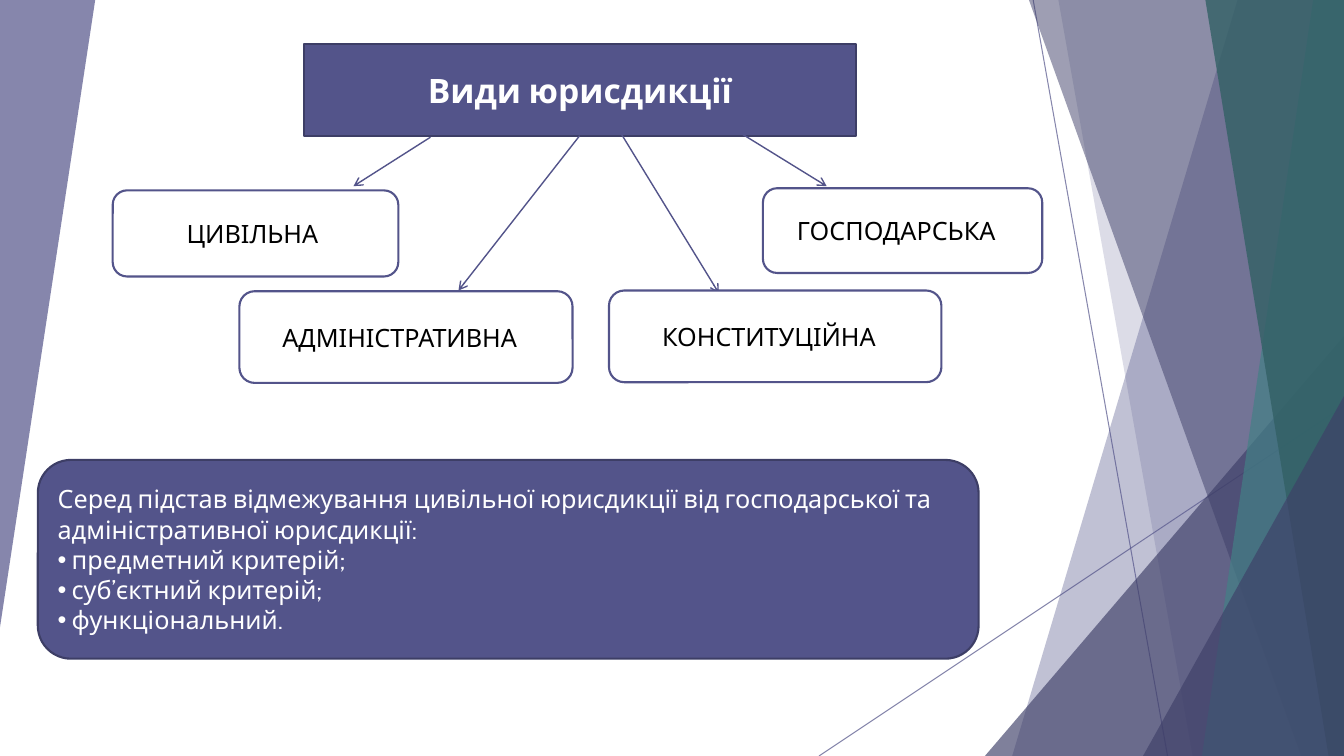
import dataclasses

import lxml.etree
import pptx
import pptx.dml.color
import pptx.enum.shapes
import pptx.enum.text
import pptx.oxml
import pptx.oxml.ns
import pptx.util

Pt = pptx.util.Pt
qn = pptx.oxml.ns.qn
SHAPE = pptx.enum.shapes.MSO_SHAPE
ALIGN = pptx.enum.text.PP_ALIGN
WIDTH, HEIGHT = 960, 540


@dataclasses.dataclass(frozen=True)
class Theme:
    font: str = "Cabin"
    title_size: int = 24
    text_size: int = 18
    main: str = "53548A"
    dark: str = "3E3F68"
    border: str = "3D3E66"
    teal: str = "438086"
    deep_teal: str = "326065"
    light: str = "FFFFFF"
    text: str = "000000"


THEME = Theme()


def rgb(value):
    return pptx.dml.color.RGBColor.from_string(value)


def apply(obj, values):
    for name, value in values.items():
        setattr(obj, name, value)


def place(sp, box):
    apply(sp, dict(zip(("left", "top", "width", "height"), map(Pt, box))))


def paint(sp, fill, line=None, opacity=100):
    sp.fill.solid()
    sp.fill.fore_color.rgb = rgb(fill)
    if opacity < 100:
        fade(sp, opacity)
    if line:
        sp.line.color.rgb = rgb(line)
        sp.line.width = Pt(1.5)
    else:
        sp.line.fill.background()


def fade(sp, opacity):
    color = next(sp.element.spPr.iter(qn("a:srgbClr")))
    lxml.etree.SubElement(color, qn("a:alpha"), val=str(opacity * 1000))


def write(sp, lines, size, color, bold=False, align=ALIGN.LEFT, right=7.2):
    tf = sp.text_frame
    apply(tf, {
        "text": "\n".join(lines),
        "word_wrap": True,
        "auto_size": pptx.enum.text.MSO_AUTO_SIZE.NONE,
        "vertical_anchor": pptx.enum.text.MSO_ANCHOR.MIDDLE,
        "margin_right": Pt(right),
    })
    for p in tf.paragraphs:
        apply(p, {"alignment": align, "space_before": Pt(0)})
        for r in p.runs:
            apply(r.font, {"name": THEME.font, "size": Pt(size), "bold": bold})
            r.font.color.rgb = rgb(color)


def set_bullet(p, char=None, indent=0):
    pPr = p._p.get_or_add_pPr()
    pPr.set("marL", str(Pt(indent)))
    pPr.set("indent", str(-Pt(indent)))
    if char:
        lxml.etree.SubElement(pPr, qn("a:buChar"), char=char)
    else:
        lxml.etree.SubElement(pPr, qn("a:buNone"))


def add_polygon(s, points, fill, opacity):
    start, *rest = [(Pt(x), Pt(y)) for x, y in points]
    builder = s.shapes.build_freeform(*start)
    builder.add_line_segments(rest, close=True)
    sp = builder.convert_to_shape()
    sp.shadow.inherit = False
    paint(sp, fill, opacity=opacity)


def add_band(s, top, bottom, fill, opacity):
    points = [(top, 0), (WIDTH, 0), (WIDTH, HEIGHT), (bottom, HEIGHT)]
    add_polygon(s, points, fill, opacity)


def add_corner(s, left, top):
    box = map(Pt, (left, top, WIDTH - left, HEIGHT - top))
    sp = s.shapes.add_shape(SHAPE.ISOSCELES_TRIANGLE, *box)
    sp.adjustments[0] = 1
    sp.shadow.inherit = False
    paint(sp, THEME.dark, opacity=66)


def add_line(s, ends, width, opacity=100, arrow=False):
    straight = pptx.enum.shapes.MSO_CONNECTOR.STRAIGHT
    line = s.shapes.add_connector(straight, *map(Pt, ends))
    line.line.color.rgb = rgb(THEME.main)
    line.line.width = Pt(width)
    if opacity < 100:
        fade(line, opacity)
    if arrow:
        ln = line.element.spPr.find(qn("a:ln"))
        lxml.etree.SubElement(ln, qn("a:tailEnd"), type="arrow")
    lxml.etree.SubElement(line.element.spPr, qn("a:effectLst"))


def add_backdrop(s):
    add_polygon(s, [(0, 0), (68, 0), (0, 448)], THEME.main, 70)
    add_line(s, (738, 0, 834, HEIGHT), 0.75, opacity=70)
    add_line(s, (WIDTH, 290, 585, HEIGHT), 0.75, opacity=70)
    add_band(s, 884, 723, THEME.main, 36)
    add_band(s, 756, 852, THEME.main, 20)
    add_corner(s, 703.5, 240)
    add_band(s, 735, 929.5, THEME.dark, 50)
    add_band(s, 938, 858.5, THEME.teal, 70)
    add_band(s, 861, 949, THEME.deep_teal, 80)
    add_corner(s, 816.5, 283)


def bring_forward(sp):
    sp.element.getparent().append(sp.element)


def fill_title(s, text):
    sp = s.shapes.title
    bring_forward(sp)
    place(sp, (217, 31.5, 394.5, 65.5))
    paint(sp, THEME.main, THEME.border)
    write(sp, [text], THEME.title_size, THEME.light, True, ALIGN.CENTER)


def fill_panel(s, intro, items):
    sp = s.placeholders[1]
    bring_forward(sp)
    place(sp, (27, 328.5, 672, 142))
    geom = pptx.oxml.parse_xml(
        '<a:prstGeom %s prst="roundRect"><a:avLst/></a:prstGeom>' % pptx.oxml.ns.nsdecls("a"))
    sp.element.spPr.find(qn("a:xfrm")).addnext(geom)
    paint(sp, THEME.main, THEME.border)
    write(sp, [intro, *items], THEME.text_size, THEME.light)
    first, *rest = sp.text_frame.paragraphs
    set_bullet(first)
    for p in rest:
        set_bullet(p, "•", 10)


def add_kind(s, text, box, right):
    sp = s.shapes.add_shape(SHAPE.ROUNDED_RECTANGLE, *map(Pt, box))
    sp.shadow.inherit = False
    paint(sp, THEME.light, THEME.main)
    write(sp, [text], THEME.text_size, THEME.text, align=ALIGN.CENTER, right=right)


def main():
    prs = pptx.Presentation()
    apply(prs, {"slide_width": Pt(WIDTH), "slide_height": Pt(HEIGHT)})
    s = prs.slides.add_slide(prs.slide_layouts[1])
    add_backdrop(s)
    fill_title(s, "Види юрисдикції")
    fill_panel(
        s,
        "Серед підстав відмежування цивільної юрисдикції від господарської "
        "та адміністративної юрисдикції:",
        ["предметний критерій;", "суб’єктний критерій;", "функціональний."],
    )
    for ends in (
        (307.5, 98, 252.5, 133),
        (530.5, 96, 590.5, 133),
        (414, 97, 327.5, 207.5),
        (444, 96, 513.5, 209.5),
    ):
        add_line(s, ends, 1, arrow=True)
    for text, box, right in (
        ("ЦИВІЛЬНА", (80.5, 136, 204, 61.5), 11.5),
        ("АДМІНІСТРАТИВНА", (171, 208, 238, 65.5), 16),
        ("ГОСПОДАРСЬКА", (545, 134.5, 199.5, 60.5), 16),
        ("КОНСТИТУЦІЙНА", (435, 207.5, 237.5, 65.5), 16),
    ):
        add_kind(s, text, box, right)
    prs.save("out.pptx")


if __name__ == "__main__":
    main()
